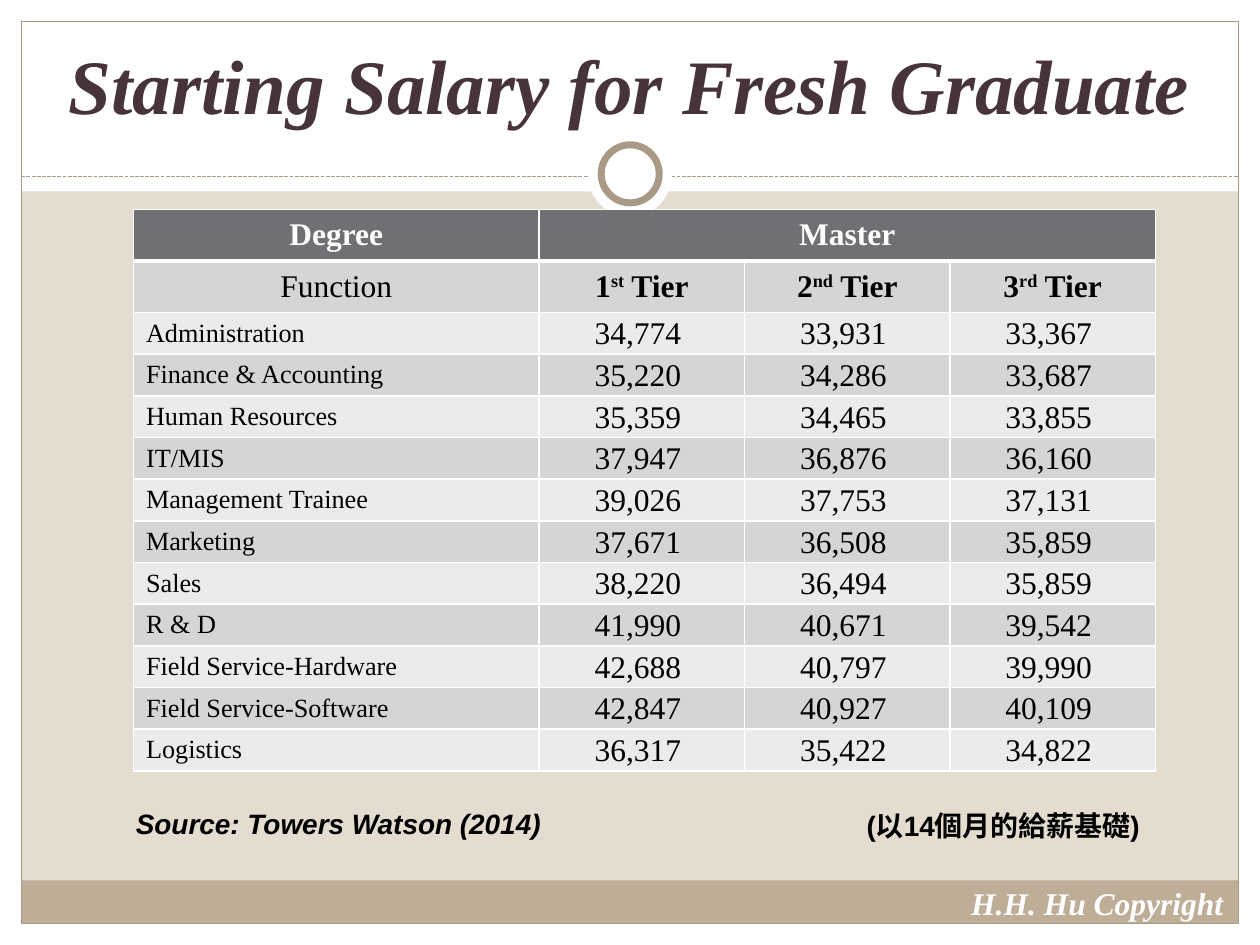
from lxml import etree
from pptx import Presentation
from pptx.dml.color import RGBColor
from pptx.enum.dml import MSO_LINE
from pptx.enum.shapes import MSO_CONNECTOR, MSO_SHAPE
from pptx.enum.text import MSO_ANCHOR, PP_ALIGN
from pptx.oxml.ns import qn
from pptx.util import Cm, Pt

RECTANGLE, OVAL = MSO_SHAPE.RECTANGLE, MSO_SHAPE.OVAL
STRAIGHT, DASH = MSO_CONNECTOR.STRAIGHT, MSO_LINE.SQUARE_DOT
LEFT, CENTER = PP_ALIGN.LEFT, PP_ALIGN.CENTER
TOP, MIDDLE, BOTTOM = MSO_ANCHOR.TOP, MSO_ANCHOR.MIDDLE, MSO_ANCHOR.BOTTOM
SERIF, SANS = "Times New Roman", "Arial"
TITLE_ONLY = 5
WIDTH, HEIGHT = 25.4, 19.05
MARGIN = 0.43

COLORS = {
    "white": "FFFFFF", "black": "000000", "sand": "E3DCCF", "footer": "BEAE98",
    "taupe": "A89A86", "title": "46343A", "header": "6F6F74",
    "dark_row": "D5D5D6", "light_row": "EBEBEB",
}

TIERS = [("1", "st"), ("2", "nd"), ("3", "rd")]
SALARIES = [
    ("Administration", 34774, 33931, 33367),
    ("Finance & Accounting", 35220, 34286, 33687),
    ("Human Resources", 35359, 34465, 33855),
    ("IT/MIS", 37947, 36876, 36160),
    ("Management Trainee", 39026, 37753, 37131),
    ("Marketing", 37671, 36508, 35859),
    ("Sales", 38220, 36494, 35859),
    ("R & D", 41990, 40671, 39542),
    ("Field Service-Hardware", 42688, 40797, 39990),
    ("Field Service-Software", 42847, 40927, 40109),
    ("Logistics", 36317, 35422, 34822),
]


def rgb(name):
    return RGBColor.from_string(COLORS[name])


def write_text(frame, *pieces, size=18, font=SERIF, color="black", bold=False,
               italic=False, align=LEFT):
    """Fill the first paragraph; a piece given as a tuple is superscript."""
    para = frame.paragraphs[0]
    para.alignment = align
    for piece in pieces:
        raised = isinstance(piece, tuple)
        span = para.add_run()
        span.text = piece[0] if raised else piece
        span.font.size, span.font.name = Pt(size), font
        span.font.bold, span.font.italic = bold, italic
        span.font.color.rgb = rgb(color)
        if raised:
            span.font._element.set("baseline", "30000")


def add_block(page, kind, left, top, width, height, fill=None, line=None, weight=0.75):
    block = page.shapes.add_shape(kind, Cm(left), Cm(top), Cm(width), Cm(height))
    block.shadow.inherit = False
    if fill:
        block.fill.solid()
        block.fill.fore_color.rgb = rgb(fill)
    else:
        block.fill.background()
    if line:
        block.line.color.rgb = rgb(line)
        block.line.width = Pt(weight)
    else:
        block.line.fill.background()


def add_dashed_rule(page, top):
    rule = page.shapes.add_connector(STRAIGHT, Cm(MARGIN), Cm(top), Cm(WIDTH - MARGIN), Cm(top))
    rule.line.color.rgb = rgb("taupe")
    rule.line.width = Pt(0.75)
    rule.line.dash_style = DASH
    etree.SubElement(rule._element.spPr, qn("a:effectLst"))


def add_label(page, text, left, top, width, height, wrap=False, **text_format):
    box = page.shapes.add_textbox(Cm(left), Cm(top), Cm(width), Cm(height))
    box.text_frame.word_wrap = wrap
    box.text_frame.vertical_anchor = TOP
    write_text(box.text_frame, text, bold=True, **text_format)


def add_backdrop(page):
    page.background.fill.solid()
    page.background.fill.fore_color.rgb = rgb("sand")
    strips = [
        (0, HEIGHT - MARGIN, WIDTH, MARGIN),
        (0, 0, WIDTH, 3.86),
        (0, 0, MARGIN, HEIGHT),
        (WIDTH - MARGIN, 0, MARGIN, HEIGHT),
    ]
    for strip in strips:
        add_block(page, RECTANGLE, *strip, fill="white")
    inner_width = WIDTH - 2 * MARGIN
    add_block(page, RECTANGLE, MARGIN, 17.75, inner_width, 0.86, fill="footer")
    add_block(page, RECTANGLE, MARGIN, MARGIN, inner_width, HEIGHT - 2 * MARGIN, line="taupe")
    add_dashed_rule(page, 3.56)
    add_block(page, OVAL, 11.85, 2.67, 1.7, 1.7, fill="white")
    add_block(page, OVAL, 12.12, 2.92, 1.17, 1.17, fill="white", line="taupe", weight=4)


def place_title(page, text):
    title = page.shapes.title
    title.left, title.top, title.width, title.height = Cm(0.84), Cm(0.64), Cm(23.7), Cm(2.11)
    title.text_frame.word_wrap = True
    title.text_frame.vertical_anchor = BOTTOM
    write_text(title.text_frame, text, size=44, color="title", bold=True,
               italic=True, align=CENTER)
    # Bring the title in front of the backdrop.
    page.shapes._spTree.append(title._element)


def set_borders(cell, top, bottom):
    """Draw white cell borders, with top and bottom widths in points."""
    properties = cell._tc.get_or_add_tcPr()
    widths = {"a:lnL": 1, "a:lnR": 1, "a:lnT": top, "a:lnB": bottom}
    for position, (tag, width) in enumerate(widths.items()):
        line = etree.Element(qn(tag), w=str(Pt(width)))
        fill = etree.SubElement(line, qn("a:solidFill"))
        etree.SubElement(fill, qn("a:srgbClr"), val=COLORS["white"])
        properties.insert(position, line)


def style_cells(table):
    for row_index, row in enumerate(table.rows):
        band = "dark_row" if row_index % 2 else "light_row"
        for cell in row.cells:
            cell.vertical_anchor = MIDDLE
            cell.fill.solid()
            cell.fill.fore_color.rgb = rgb(band if row_index else "header")
            set_borders(cell, top=3 if row_index == 1 else 1, bottom=1 if row_index else 3)


def add_salary_table(page):
    row_heights = [1.04] * 2 + [0.84] * len(SALARIES)
    column_widths = [8.18] + [4.14] * len(TIERS)
    table = page.shapes.add_table(
        len(row_heights), len(column_widths), Cm(2.69), Cm(4.22),
        Cm(sum(column_widths)), Cm(sum(row_heights))).table
    for row, height in zip(table.rows, row_heights):
        row.height = Cm(height)
    for column, width in zip(table.columns, column_widths):
        column.width = Cm(width)
    style_cells(table)

    table.cell(0, 1).merge(table.cell(0, len(TIERS)))
    for column, heading in enumerate(["Degree", "Master"]):
        write_text(table.cell(0, column).text_frame, heading, color="white",
                   bold=True, align=CENTER)
    write_text(table.cell(1, 0).text_frame, "Function", align=CENTER)
    for column, (number, suffix) in enumerate(TIERS, 1):
        write_text(table.cell(1, column).text_frame, number, (suffix,), " Tier",
                   bold=True, align=CENTER)
    for row, (function, *salaries) in enumerate(SALARIES, 2):
        write_text(table.cell(row, 0).text_frame, function, size=15)
        for column, salary in enumerate(salaries, 1):
            cell = table.cell(row, column)
            cell.margin_left = cell.margin_right = cell.margin_top = Cm(0.03)
            cell.margin_bottom = 0
            write_text(cell.text_frame, f"{salary:,} ", align=CENTER)


def main():
    deck = Presentation()
    deck.slide_width, deck.slide_height = Cm(WIDTH), Cm(HEIGHT)
    page = deck.slides.add_slide(deck.slide_layouts[TITLE_ONLY])
    add_backdrop(page)
    add_label(page, "H.H. Hu Copyright", 19.33, 17.7, 5.77, 1.02, color="white", italic=True)
    place_title(page, "Starting Salary for Fresh Graduate")
    add_salary_table(page)
    add_label(page, "Source: Towers Watson (2014)", 2.49, 16.13, 8.79, 0.94,
              size=16, font=SANS, italic=True)
    add_label(page, "(以14個月的給薪基礎)", 17.22, 16.18, 6.1, 0.94, wrap=True,
              size=16, font=SANS)
    deck.save("out.pptx")


if __name__ == "__main__":
    main()
